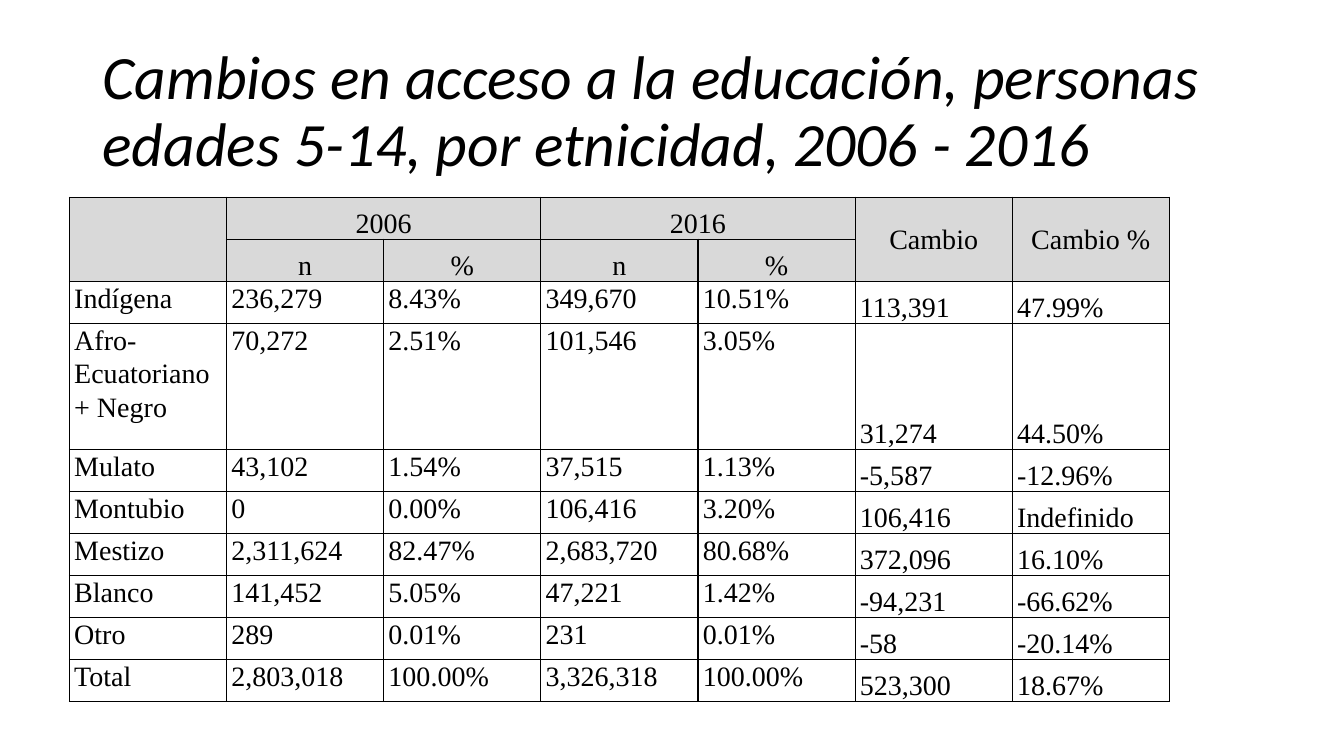
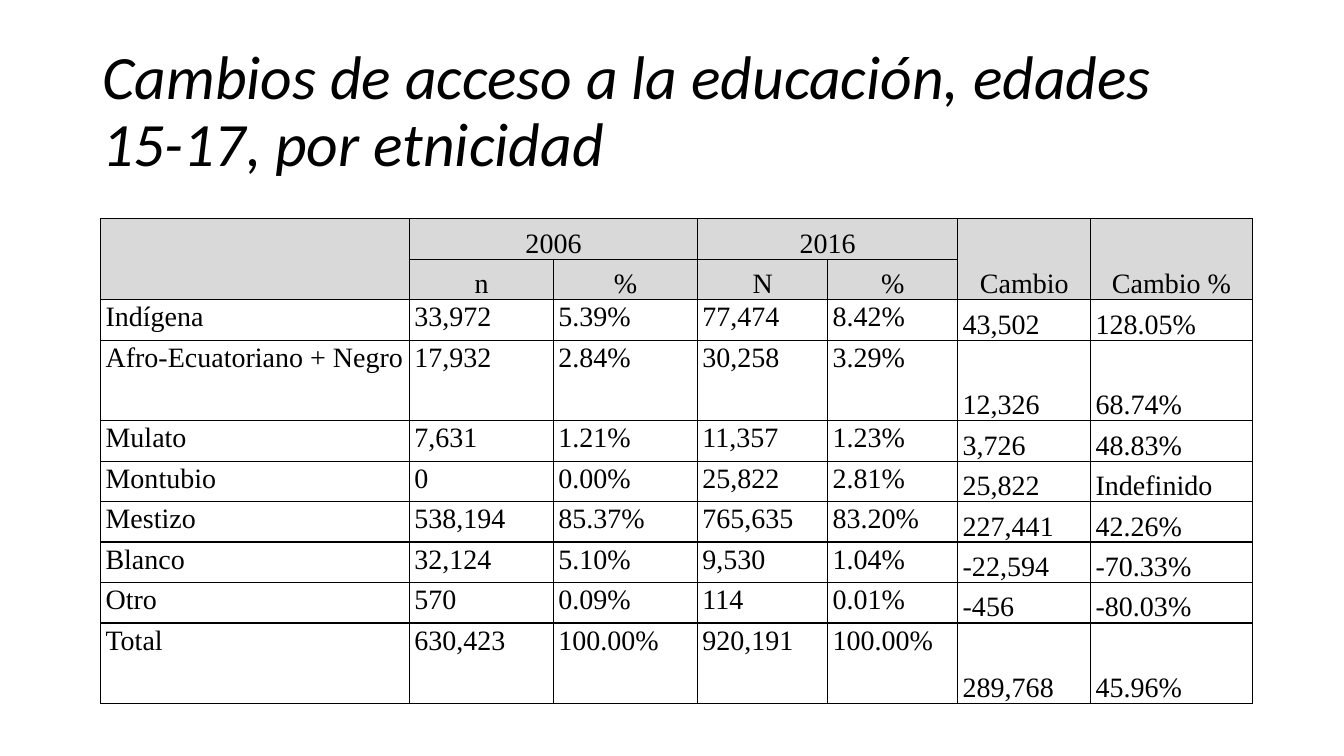
from lxml import etree
from pptx import Presentation
from pptx.dml.color import RGBColor
from pptx.enum.text import MSO_ANCHOR as Anchor, MSO_AUTO_SIZE as AutoSize, PP_ALIGN as Align
from pptx.oxml.ns import qn
from pptx.util import Cm, Pt

# Shared style
BLACK = RGBColor(0x00, 0x00, 0x00)
HEADER_GREY = RGBColor(0xD9, 0xD9, 0xD9)
TITLE_FONT = "Calibri"
TABLE_FONT = "Times New Roman"
TITLE_ONLY = 5
BORDER_WIDTH = Pt(1)
CELL_MARGIN = Cm(0.12)

# Table structure shared by both slides
GROUPS = ("Indígena", "Afro-Ecuatoriano + Negro", "Mulato", "Montubio",
          "Mestizo", "Blanco", "Otro", "Total")
HEADER_ROWS = 2
FIRST_CHANGE_COLUMN = 5
HEADER_MERGES = (((0, 0), (1, 0)), ((0, 1), (0, 2)), ((0, 3), (0, 4)),
                 ((0, 5), (1, 5)), ((0, 6), (1, 6)))

# Figures: n and % in 2006, n and % in 2016, change, change in %
CHILDREN = (
    ("236,279", "8.43%", "349,670", "10.51%", "113,391", "47.99%"),
    ("70,272", "2.51%", "101,546", "3.05%", "31,274", "44.50%"),
    ("43,102", "1.54%", "37,515", "1.13%", "-5,587", "-12.96%"),
    ("0", "0.00%", "106,416", "3.20%", "106,416", "Indefinido"),
    ("2,311,624", "82.47%", "2,683,720", "80.68%", "372,096", "16.10%"),
    ("141,452", "5.05%", "47,221", "1.42%", "-94,231", "-66.62%"),
    ("289", "0.01%", "231", "0.01%", "-58", "-20.14%"),
    ("2,803,018", "100.00%", "3,326,318", "100.00%", "523,300", "18.67%"),
)
TEENAGERS = (
    ("33,972", "5.39%", "77,474", "8.42%", "43,502", "128.05%"),
    ("17,932", "2.84%", "30,258", "3.29%", "12,326", "68.74%"),
    ("7,631", "1.21%", "11,357", "1.23%", "3,726", "48.83%"),
    ("0", "0.00%", "25,822", "2.81%", "25,822", "Indefinido"),
    ("538,194", "85.37%", "765,635", "83.20%", "227,441", "42.26%"),
    ("32,124", "5.10%", "9,530", "1.04%", "-22,594", "-70.33%"),
    ("570", "0.09%", "114", "0.01%", "-456", "-80.03%"),
    ("630,423", "100.00%", "920,191", "100.00%", "289,768", "45.96%"),
)


def add_titled_page(deck, text):
    page = deck.slides.add_slide(deck.slide_layouts[TITLE_ONLY])
    title = page.shapes.title
    title.left, title.top, title.width, title.height = Cm(2.33), Cm(1.01), Cm(29.21), Cm(3.68)
    frame = title.text_frame
    frame.text = text
    frame.word_wrap = True
    frame.auto_size = AutoSize.NONE
    frame.vertical_anchor = Anchor.MIDDLE
    para = frame.paragraphs[0]
    para.alignment = Align.LEFT
    para.line_spacing = 0.9
    para.font.name = TITLE_FONT
    para.font.size = Pt(44)
    para.font.italic = True
    para.font.color.rgb = BLACK
    return page


def add_borders(cell):
    """Draw the four edges; they must precede the fill in the cell's XML."""
    properties = cell._tc.get_or_add_tcPr()
    for position, edge in enumerate(("a:lnL", "a:lnR", "a:lnT", "a:lnB")):
        line = etree.Element(qn(edge), w=str(BORDER_WIDTH))
        fill = etree.SubElement(line, qn("a:solidFill"))
        etree.SubElement(fill, qn("a:srgbClr"), val=str(BLACK))
        properties.insert(position, line)


def format_cell(cell, text, alignment, anchor):
    cell.text = text
    cell.margin_left = cell.margin_right = CELL_MARGIN
    cell.margin_top = cell.margin_bottom = 0
    cell.vertical_anchor = anchor
    para = cell.text_frame.paragraphs[0]
    para.alignment = alignment
    para.line_spacing = 1.07
    para.font.name = TABLE_FONT
    para.font.size = Pt(20)
    para.font.color.rgb = BLACK
    add_borders(cell)


def add_header_cell(cell, text, anchor):
    format_cell(cell, text, Align.CENTER, anchor)
    cell.fill.solid()
    cell.fill.fore_color.rgb = HEADER_GREY


def add_body_cell(cell, text, anchor):
    format_cell(cell, text, Align.JUSTIFY, anchor)
    cell.fill.background()


def add_change_table(page, left, top, widths, row_height, tall_rows, figures,
                     second_count="n", change_anchor=Anchor.BOTTOM):
    """Add the table; lengths are in cm, tall_rows maps a row to its height."""
    header = (("", "2006", "", "2016", "", "Cambio", "Cambio %"),
              ("", "n", "%", second_count, "%", "", ""))
    body = [(group, *values) for group, values in zip(GROUPS, figures)]
    rows = [*header, *body]
    heights = [tall_rows.get(index, row_height) for index in range(len(rows))]

    frame = page.shapes.add_table(len(rows), len(widths), Cm(left), Cm(top),
                                  Cm(sum(widths)), Cm(sum(heights)))
    table = frame.table
    table.first_row = table.horz_banding = False
    for column, width in zip(table.columns, widths):
        column.width = Cm(width)
    for row, height in zip(table.rows, heights):
        row.height = Cm(height)

    for row_index, row in enumerate(rows):
        for column_index, text in enumerate(row):
            cell = table.cell(row_index, column_index)
            is_change = column_index >= FIRST_CHANGE_COLUMN
            if row_index < HEADER_ROWS:
                add_header_cell(cell, text, change_anchor if is_change else Anchor.BOTTOM)
            else:
                add_body_cell(cell, text, Anchor.BOTTOM if is_change else Anchor.TOP)
    for first, last in HEADER_MERGES:
        table.cell(*first).merge(table.cell(*last))


def main():
    deck = Presentation()
    deck.slide_width, deck.slide_height = Cm(33.87), Cm(19.05)

    # Ages 5 to 14
    page = add_titled_page(
        deck, "Cambios en acceso a la educación, personas edades 5-14, por etnicidad, 2006 - 2016")
    add_change_table(page, 1.75, 4.97, [3.96] * 7, 1.06, {3: 3.17}, CHILDREN,
                     change_anchor=Anchor.MIDDLE)

    # Ages 15 to 17
    page = add_titled_page(deck, "Cambios de acceso a la educación, edades 15-17, por etnicidad")
    add_change_table(page, 2.54, 5.51, [7.78, 3.63, 3.63, 3.28, 3.28, 3.35, 4.07],
                     1.02, {3: 2.03, 9: 2.03}, TEENAGERS, second_count="N")

    deck.save("out.pptx")


if __name__ == "__main__":
    main()
